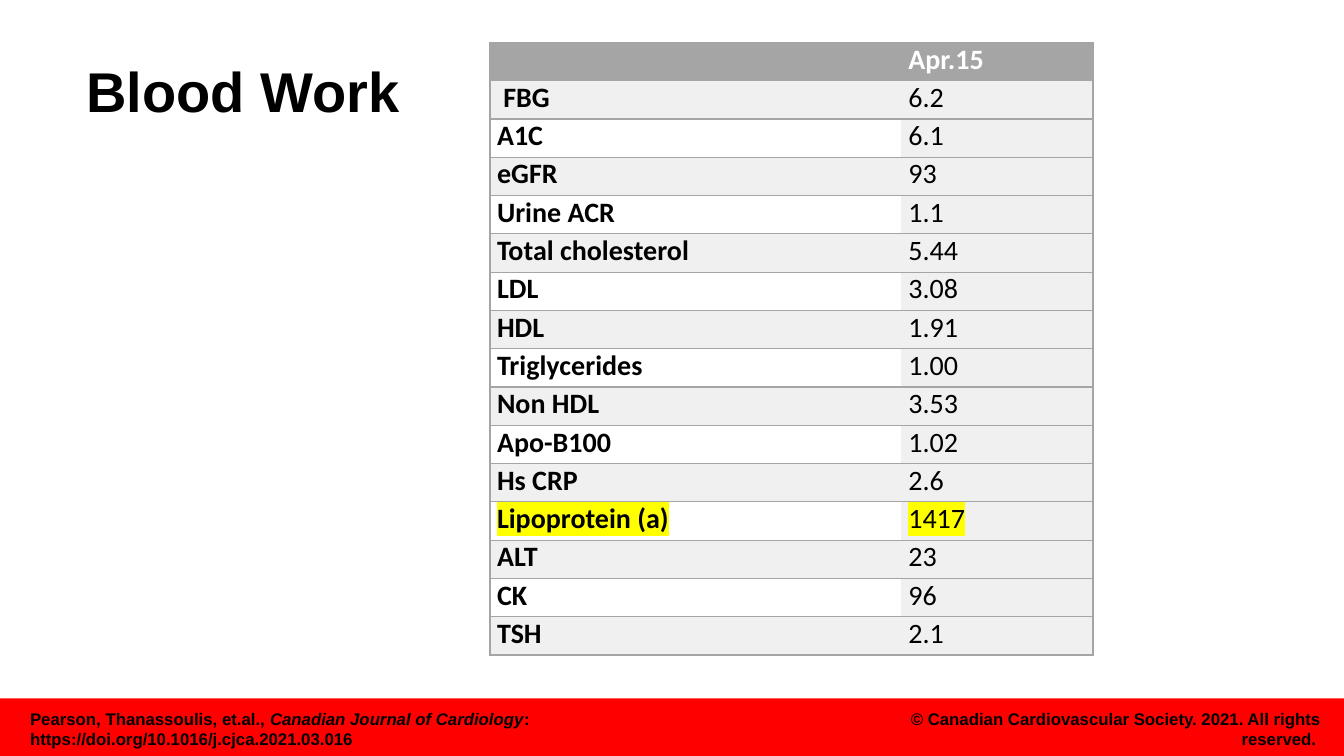
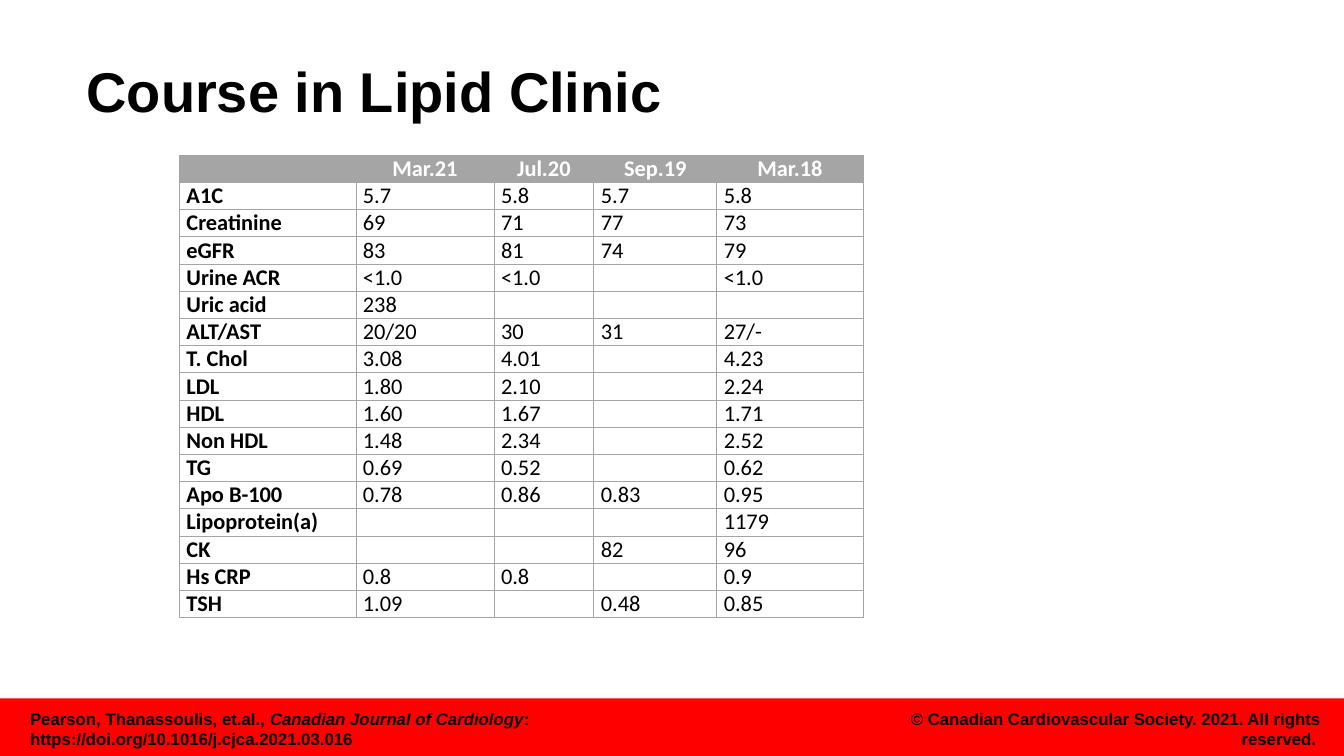
from lxml.etree import SubElement
from pptx import Presentation
from pptx.dml.color import RGBColor
from pptx.enum.shapes import MSO_SHAPE as Shape
from pptx.enum.text import MSO_ANCHOR as Anchor, PP_ALIGN as Align
from pptx.oxml import parse_xml
from pptx.oxml.ns import nsdecls, qn
from pptx.util import Inches, Pt


class Theme:
    black, white, red = "000000", "FFFFFF", "FF0000"
    gray, pale, yellow = "A5A5A5", "F0F0F0", "FFFF00"
    heading, body = "Arial", "Calibri"
    title_size, footer_size = 40, 12
    no_table_style = "{2D5ABB26-0587-4C30-8999-92F81FD0307C}"


COPYRIGHT = [("© Canadian Cardiovascular Society. 2021. All rights reserved. ", False)]
CITATION = [
    ("Pearson, Thanassoulis, et.al., ", False),
    ("Canadian Journal of Cardiology", True),
    (": https://doi.org/10.1016/j.cjca.2021.03.016", False),
]

SLIDES = [
    {
        "title": "Blood Work",
        "left": 4.86, "top": 0.42, "columns": [4.08, 1.9], "row_height": 0.38,
        "size": 20, "line": 1, "header_align": Align.JUSTIFY,
        "banded": True, "inner_verticals": False, "highlighted": "Lipoprotein (a)",
        "rows": [
            ("", "Apr.15"),
            (" FBG", "6.2"),
            ("A1C", "6.1"),
            ("eGFR", "93"),
            ("Urine ACR", "1.1"),
            ("Total cholesterol", "5.44"),
            ("LDL", "3.08"),
            ("HDL", "1.91"),
            ("Triglycerides", "1.00"),
            ("Non HDL", "3.53"),
            ("Apo-B100", "1.02"),
            ("Hs CRP", "2.6"),
            ("Lipoprotein (a)", "1417"),
            ("ALT", "23"),
            ("CK", "96"),
            ("TSH", "2.1"),
        ],
    },
    {
        "title": "Course in Lipid Clinic",
        "left": 1.78, "top": 1.54, "columns": [1.75, 1.37, 0.99, 1.22, 1.45],
        "row_height": 0.27, "size": 16, "line": 0.5, "header_align": Align.CENTER,
        "banded": False, "inner_verticals": True, "highlighted": None,
        "rows": [
            ("", "Mar.21", "Jul.20", "Sep.19", "Mar.18"),
            ("A1C", "5.7", "5.8", "5.7", "5.8"),
            ("Creatinine", "69", "71", "77", "73"),
            ("eGFR", "83", "81", "74", "79"),
            ("Urine ACR", "<1.0", "<1.0", "", "<1.0"),
            ("Uric acid", "238", "", "", ""),
            ("ALT/AST", "20/20", "30", "31", "27/-"),
            ("T. Chol", "3.08", "4.01", "", "4.23"),
            ("LDL", "1.80", "2.10", "", "2.24"),
            ("HDL", "1.60", "1.67", "", "1.71"),
            ("Non HDL", "1.48", "2.34", "", "2.52"),
            ("TG", "0.69", "0.52", "", "0.62"),
            ("Apo B-100", "0.78", "0.86", "0.83", "0.95"),
            ("Lipoprotein(a)", "", "", "", "1179"),
            ("CK", "", "", "82", "96"),
            ("Hs CRP", "0.8", "0.8", "", "0.9"),
            ("TSH", "1.09", "", "0.48", "0.85"),
        ],
    },
]


def add_span(para, text, size, font, color=Theme.black, bold=True, italic=False):
    span = para.add_run()
    span.text = text
    span.font.size, span.font.name = Pt(size), font
    span.font.bold, span.font.italic = bold, italic
    span.font.color.rgb = RGBColor.from_string(color)
    return span


def add_after_fill(span, xml):
    span.font._element.find(qn("a:solidFill")).addnext(parse_xml(xml))


def add_text_box(page, left, top, width, height):
    box = page.shapes.add_textbox(*map(Inches, (left, top, width, height)))
    box.text_frame.word_wrap = True
    return box.text_frame


def add_title(page, text):
    frame = add_text_box(page, 0.76, 0.4, 11.81, 1.07)
    frame.vertical_anchor = Anchor.MIDDLE
    para = frame.paragraphs[0]
    para.line_spacing = 0.9
    add_span(para, text, Theme.title_size, Theme.heading)


def add_footer(page):
    band = page.shapes.add_shape(
        Shape.RECTANGLE, 0, Inches(6.93), Inches(13.33), Inches(0.57))
    band.shadow.inherit = False
    band.fill.solid()
    band.fill.fore_color.rgb = RGBColor.from_string(Theme.red)
    band.line.fill.background()
    for left, width, align, parts in (
        (8.7, 4.5, Align.RIGHT, COPYRIGHT),
        (0.2, 8, Align.LEFT, CITATION),
    ):
        para = add_text_box(page, left, 6.98, width, 0.3).paragraphs[0]
        para.alignment = align
        for text, italic in parts:
            span = add_span(para, text, Theme.footer_size, Theme.heading, italic=italic)
            add_after_fill(span, (
                f'<a:effectLst {nsdecls("a")}>'
                '<a:outerShdw blurRad="38100" dist="38100" dir="2700000">'
                f'<a:srgbClr val="{Theme.white}"/></a:outerShdw></a:effectLst>'))


def add_borders(cell, sides, width):
    properties = cell._tc.get_or_add_tcPr()
    for side in sides:
        line = SubElement(properties, qn(f"a:ln{side}"), w=str(Pt(width)))
        fill = SubElement(line, qn("a:solidFill"))
        SubElement(fill, qn("a:srgbClr"), val=Theme.gray)


def cell_fill(content, row, column):
    if row == 0:
        return Theme.gray
    if content["banded"] and (column > 0 or row % 2 == 1):
        return Theme.pale
    return Theme.white


def fill_cell(cell, content, row, column, text):
    last = len(content["columns"]) - 1
    sides = [
        side for side, wanted in (
            ("L", column == 0 or content["inner_verticals"]),
            ("R", column == last or content["inner_verticals"]),
            ("T", True),
            ("B", True),
        ) if wanted
    ]
    add_borders(cell, sides, content["line"])
    cell.fill.solid()
    cell.fill.fore_color.rgb = RGBColor.from_string(cell_fill(content, row, column))
    cell.margin_left = cell.margin_right = Inches(0.07)
    cell.margin_top = cell.margin_bottom = 0
    para = cell.text_frame.paragraphs[0]
    para.alignment = content["header_align"] if row == 0 else Align.JUSTIFY
    if not text:
        SubElement(para._p, qn("a:endParaRPr"), sz=str(content["size"] * 100))
        return
    span = add_span(
        para, text, content["size"], Theme.body,
        color=Theme.white if row == 0 else Theme.black,
        bold=row == 0 or column == 0)
    if content["rows"][row][0] == content["highlighted"]:
        add_after_fill(span, (
            f'<a:highlight {nsdecls("a")}>'
            f'<a:srgbClr val="{Theme.yellow}"/></a:highlight>'))


def add_results_table(page, content):
    rows, columns = content["rows"], content["columns"]
    table = page.shapes.add_table(
        len(rows), len(columns), Inches(content["left"]), Inches(content["top"]),
        Inches(sum(columns)), Inches(content["row_height"] * len(rows))).table
    table.horz_banding = False
    table._tbl.tblPr.find(qn("a:tableStyleId")).text = Theme.no_table_style
    for column, width in zip(table.columns, columns):
        column.width = Inches(width)
    for row, values in enumerate(rows):
        table.rows[row].height = Inches(content["row_height"])
        for column, text in enumerate(values):
            fill_cell(table.cell(row, column), content, row, column, text)


def main():
    deck = Presentation()
    deck.slide_width, deck.slide_height = Inches(13.33), Inches(7.5)
    for content in SLIDES:
        page = deck.slides.add_slide(deck.slide_layouts[6])
        add_footer(page)
        add_title(page, content["title"])
        add_results_table(page, content)
    deck.save("out.pptx")


if __name__ == "__main__":
    main()
